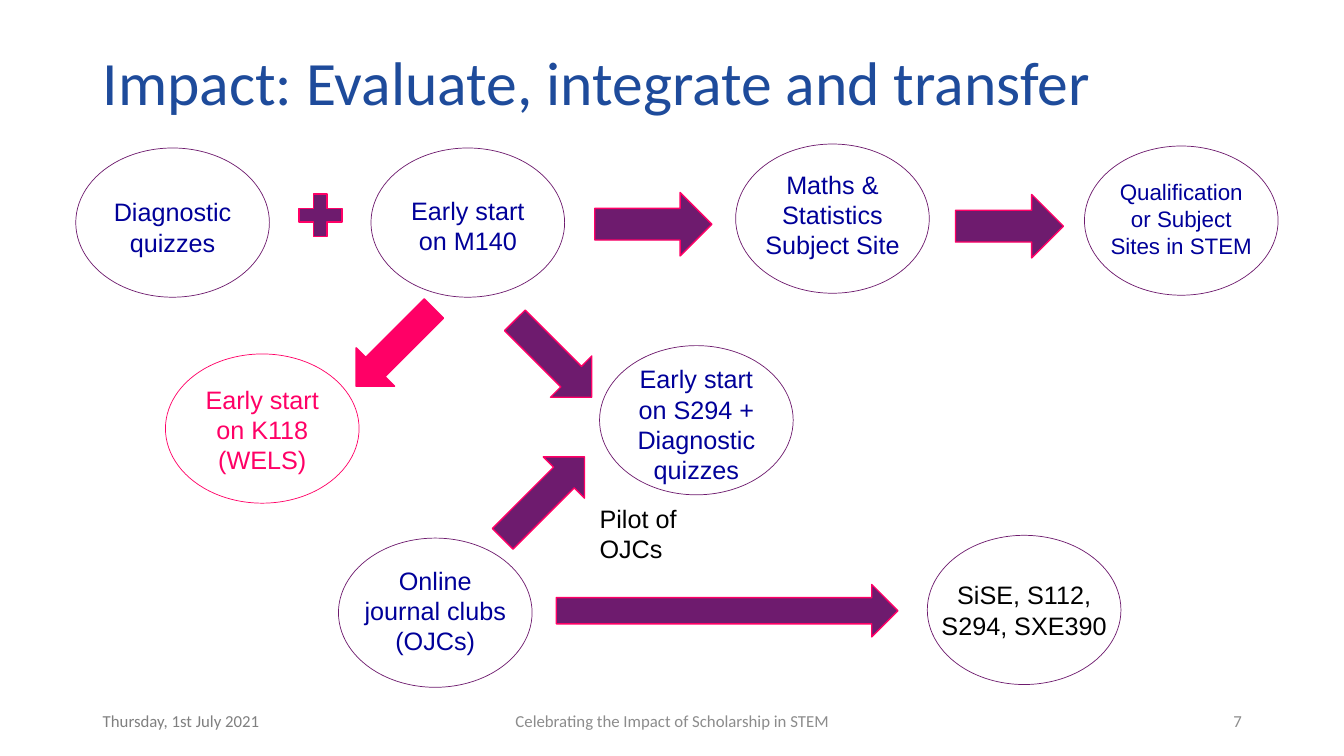
from dataclasses import dataclass
from pptx import Presentation
from pptx.dml.color import RGBColor as Rgb
from pptx.enum.shapes import MSO_SHAPE as Kind
from pptx.enum.text import MSO_ANCHOR as Anchor, MSO_AUTO_SIZE as Fit, PP_ALIGN as Align
from pptx.util import Cm, Pt


@dataclass(frozen=True)
class Theme:
    title: str = "1E4B9B"
    plum: str = "6E1B6E"
    pink: str = "FF0066"
    navy: str = "000099"
    black: str = "000000"
    white: str = "FFFFFF"
    date: str = "808080"
    foot: str = "8C8C8C"
    head: str = "Calibri"
    body: str = "Arial"
    big: int = 44
    mid: int = 18
    less: int = 16
    small: int = 12


look = Theme()
deck = Presentation()
deck.slide_width, deck.slide_height = Cm(33.87), Cm(19.05)
slide = deck.slides.add_slide(deck.slide_layouts[5])
shapes = slide.shapes


def write(box, text, size, font, color, align=Align.LEFT, anchor=Anchor.TOP, fit=Fit.NONE):
    frame = box.text_frame
    frame.text = text
    frame.word_wrap = True
    frame.auto_size = fit
    frame.vertical_anchor = anchor
    para = frame.paragraphs[0]
    para.alignment = align
    style = para.runs[0].font
    style.size, style.name = Pt(size), font
    style.color.rgb = Rgb.from_string(color)


def draw(kind, place, fill, line, width):
    shape = shapes.add_shape(kind, *map(Cm, place))
    shape.shadow.inherit = False
    shape.fill.solid()
    shape.fill.fore_color.rgb = Rgb.from_string(fill)
    shape.line.color.rgb = Rgb.from_string(line)
    shape.line.width = Pt(width)
    return shape


# Title
title = shapes.title
title.left, title.top, title.width, title.height = map(Cm, (2.34, 1.02, 29.21, 2.29))
write(title, "Impact: Evaluate, integrate and transfer", look.big, look.head,
      look.title, anchor=Anchor.MIDDLE)
title.text_frame.paragraphs[0].line_spacing = 0.9

# Footer row
footer = [
    ("Thursday, 1st July 2021", 2.34, 7.62, look.date, Align.LEFT),
    ("Celebrating the Impact of Scholarship in STEM", 11.23, 11.43, look.foot, Align.CENTER),
    ("7", 23.93, 7.62, look.foot, Align.RIGHT),
]
for text, left, width, color, align in footer:
    box = shapes.add_textbox(Cm(left), Cm(17.65), Cm(width), Cm(1.02))
    write(box, text, look.small, look.head, color, align, Anchor.MIDDLE)

# Plus sign and arrows: kind, place, turn, fill
links = [
    (Kind.MATH_PLUS, (7.34, 4.7, 1.47, 1.45), 0, look.plum),
    (Kind.RIGHT_ARROW, (14.99, 4.85, 2.95, 1.6), 0, look.plum),
    (Kind.RIGHT_ARROW, (24.08, 4.9, 2.72, 1.6), 0, look.plum),
    (Kind.DOWN_ARROW, (9.27, 7.37, 1.37, 2.77), 45, look.pink),
    (Kind.DOWN_ARROW, (13.21, 7.67, 1.47, 2.74), 315, look.plum),
    (Kind.RIGHT_ARROW, (12.24, 11.81, 2.92, 1.47), 315, look.plum),
    (Kind.RIGHT_ARROW, (14.02, 14.73, 8.61, 1.32), 0, look.plum),
]
for kind, place, turn, fill in links:
    draw(kind, place, fill, look.pink, 1).rotation = turn

# Ovals with centred labels: text, left, top, label top, width and height, size, ink, edge
wide, high = 4.88, 3.76
nodes = [
    ("Diagnostic quizzes", 1.91, 3.73, 4.83, 3.51, 1.8, look.mid, look.navy, look.plum),
    ("Early start on M140", 9.35, 3.73, 4.8, 3.51, 1.8, look.mid, look.navy, look.plum),
    ("Maths & Statistics Subject Site", 18.54, 3.63, 4.14, 3.91, 2.57,
     look.mid, look.navy, look.plum),
    ("Qualification or Subject Sites in STEM", 27.33, 3.68, 4.37, 4.17, 2.31,
     look.less, look.navy, look.plum),
    ("Early start on K118 (WELS)", 4.17, 8.92, 9.55, 3.51, 2.57,
     look.mid, look.pink, look.pink),
    ("Early start on S294 + Diagnostic quizzes", 15.11, 8.71, 9.04, 3.51, 3.33,
     look.mid, look.navy, look.plum),
    ("Online journal clubs (OJCs)", 8.53, 13.56, 14.12, 4.14, 2.57,
     look.mid, look.navy, look.plum),
    ("SiSE, S112, S294, SXE390", 23.37, 13.49, 14.48, 4.85, 1.8,
     look.mid, look.black, look.plum),
]
for text, left, top, start, width, height, size, ink, edge in nodes:
    draw(Kind.OVAL, (left, top, wide, high), look.white, edge, 0.5)
    inset = (wide - width) / 2
    box = shapes.add_textbox(Cm(left + inset), Cm(start), Cm(width), Cm(height))
    write(box, text, size, look.body, ink, Align.CENTER, fit=Fit.SHAPE_TO_FIT_TEXT)

# Pilot note
note = shapes.add_textbox(Cm(14.86), Cm(12.55), Cm(3.76), Cm(1.8))
write(note, "Pilot of OJCs", look.mid, look.body, look.black, fit=Fit.SHAPE_TO_FIT_TEXT)

deck.save("out.pptx")
